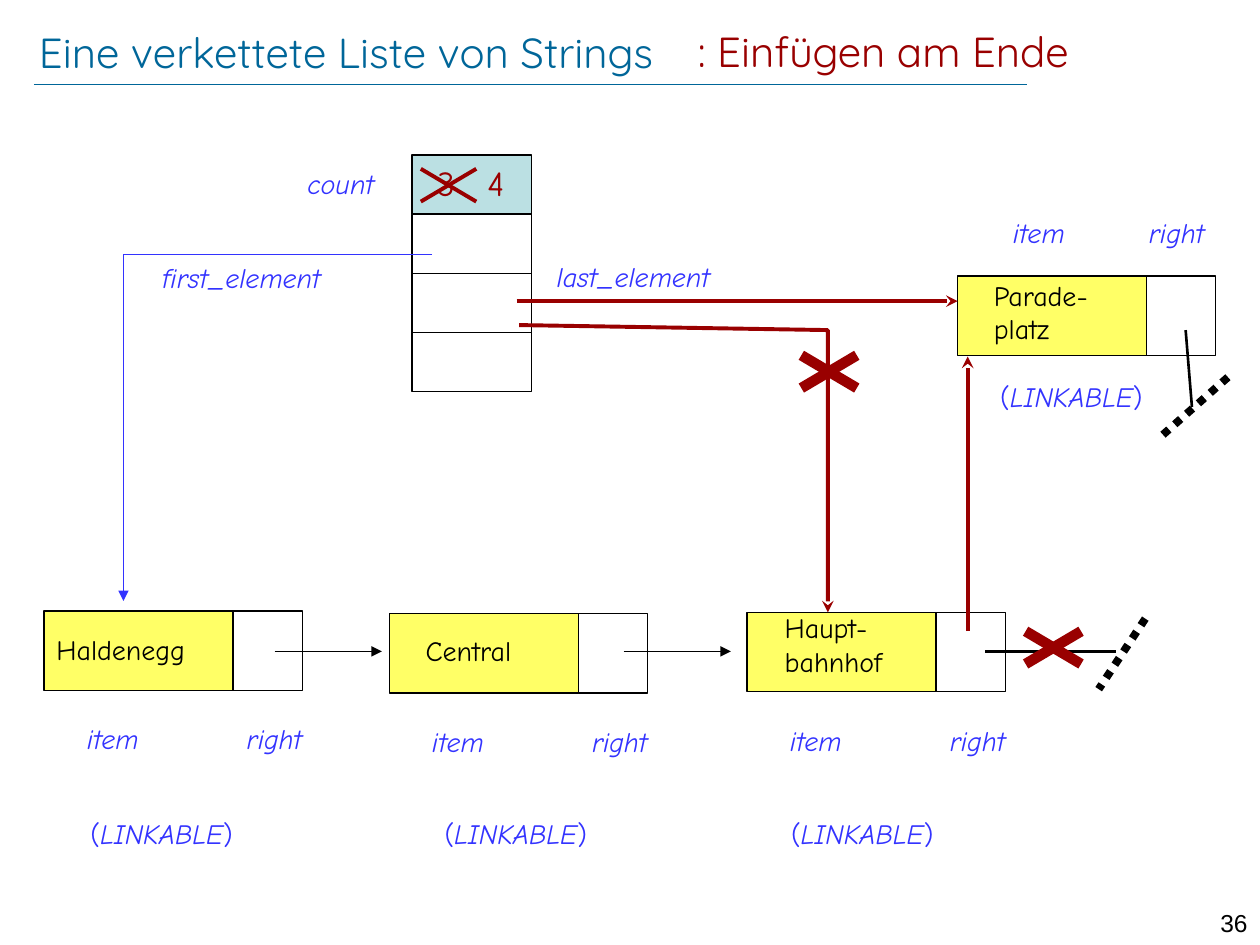
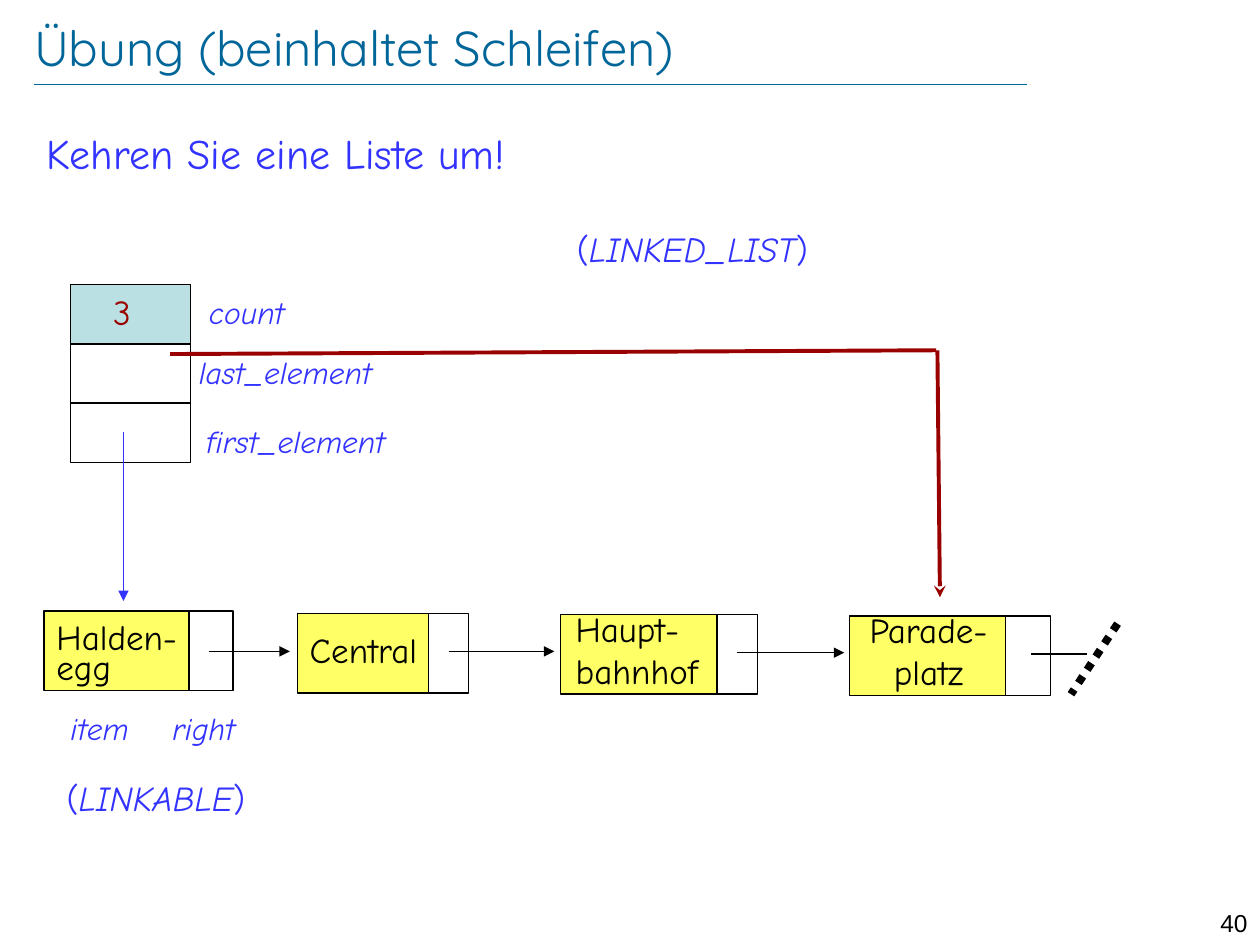
from dataclasses import dataclass
from typing import NamedTuple

from lxml import etree
from pptx import Presentation
from pptx.dml.color import RGBColor
from pptx.enum.dml import MSO_LINE
from pptx.enum.shapes import MSO_CONNECTOR, MSO_SHAPE
from pptx.enum.text import MSO_ANCHOR, PP_ALIGN
from pptx.oxml.ns import qn
from pptx.util import Inches, Pt

STRAIGHT = MSO_CONNECTOR.STRAIGHT
RECTANGLE = MSO_SHAPE.RECTANGLE
DOTTED = MSO_LINE.ROUND_DOT
LEFT, CENTER, RIGHT = PP_ALIGN.LEFT, PP_ALIGN.CENTER, PP_ALIGN.RIGHT
TOP, MIDDLE = MSO_ANCHOR.TOP, MSO_ANCHOR.MIDDLE

COLORS = {
    "title": "006699",
    "label": "3333FF",
    "accent": "990000",
    "ink": "000000",
    "item": "FFFF66",
    "count": "BBE0E3",
}
TITLE_FONT, TEXT_FONT, NUMBER_FONT = "Quicksand", "Comic Neue", "Arial"
NODE_HEIGHT = 0.63
CELL_WIDTH, CELL_HEIGHT = 0.95, 0.47


class Stroke(NamedTuple):
    color: str
    width: float
    head: str = ""
    dotted: bool = False


RULE = Stroke("title", 0.25)
OUTLINE = Stroke("ink", 0.75)
LINK = Stroke("ink", 0.75, "triangle")
VOID_LINK = Stroke("ink", 1.5)
VOID_BAR = Stroke("ink", 4.5, dotted=True)
FIRST = Stroke("label", 0.75)
FIRST_ARROW = Stroke("label", 0.75, "triangle")
LAST = Stroke("accent", 2.25)
LAST_ARROW = Stroke("accent", 2.25, "stealth")
BOLD_CROSS = Stroke("accent", 6)


class Line(NamedTuple):
    x1: float
    y1: float
    x2: float
    y2: float
    stroke: Stroke


class Cross(NamedTuple):
    x: float
    y: float
    stroke: Stroke


@dataclass
class Label:
    """Text at a place; parentheses around an italic class name stay upright."""
    text: str
    left: float
    top: float
    width: float = 2.8
    height: float = 0.4
    size: float = 16
    color: str = "label"
    font: str = TEXT_FONT
    italic: bool = True
    align: PP_ALIGN = LEFT
    anchor: MSO_ANCHOR = TOP
    inset: bool = True
    spacing: float = 1.0


@dataclass
class Node:
    text: str
    left: float
    top: float
    item_width: float
    link_width: float
    text_left: float
    text_top: float
    text_width: float
    size: float = 16
    align: PP_ALIGN = LEFT
    spacing: float = 1.0


def rgb(name: str) -> RGBColor:
    return RGBColor.from_string(COLORS[name])


def apply_stroke(shape, stroke: Stroke) -> None:
    shape.line.color.rgb = rgb(stroke.color)
    shape.line.width = Pt(stroke.width)
    if stroke.dotted:
        shape.line.dash_style = DOTTED
    if stroke.head:
        outline = shape.element.spPr.find(qn("a:ln"))
        etree.SubElement(outline, qn("a:tailEnd"), type=stroke.head)


def draw_line(slide, line: Line) -> None:
    ends = [Inches(value) for value in line[:4]]
    connector = slide.shapes.add_connector(STRAIGHT, *ends)
    apply_stroke(connector, line.stroke)
    etree.SubElement(connector.element.spPr, qn("a:effectLst"))


def draw_cross(slide, cross: Cross) -> None:
    x, y, stroke = cross
    for rise in (-0.13, 0.13):
        draw_line(slide, Line(x - 0.22, y - rise, x + 0.22, y + rise, stroke))


def draw_bent_arrow(slide, points: list[tuple[float, float]], stroke: Stroke) -> None:
    corners = [(Inches(x), Inches(y)) for x, y in points]
    builder = slide.shapes.build_freeform(*corners[0])
    builder.add_line_segments(corners[1:], close=False)
    arrow = builder.convert_to_shape()
    arrow.shadow.inherit = False
    arrow.fill.background()
    apply_stroke(arrow, stroke)


def draw_box(slide, left: float, top: float, width: float, height: float,
             fill: str = "") -> None:
    box = slide.shapes.add_shape(RECTANGLE, *map(Inches, (left, top, width, height)))
    box.shadow.inherit = False
    if fill:
        box.fill.solid()
        box.fill.fore_color.rgb = rgb(fill)
    else:
        box.fill.background()
    apply_stroke(box, OUTLINE)


def draw_label(slide, label: Label) -> None:
    place = map(Inches, (label.left, label.top, label.width, label.height))
    frame = slide.shapes.add_textbox(*place).text_frame
    settings = {"word_wrap": True, "vertical_anchor": label.anchor}
    if not label.inset:
        sides = ("left", "top", "right", "bottom")
        settings |= {f"margin_{side}": 0 for side in sides}
    for name, value in settings.items():
        setattr(frame, name, value)
    para = frame.paragraphs[0]
    para.alignment = label.align
    para.line_spacing = label.spacing
    wrapped = label.text.startswith("(")
    pieces = ["(", label.text[1:-1], ")"] if wrapped else label.text.split("\n")
    for index, piece in enumerate(pieces):
        if index and not wrapped:
            para.add_line_break()
        span = para.add_run()
        span.text = piece
        formats = {
            "name": label.font,
            "size": Pt(label.size),
            "italic": label.italic and piece not in "()",
        }
        for name, value in formats.items():
            setattr(span.font, name, value)
        span.font.color.rgb = rgb(label.color)


def draw_node(slide, node: Node) -> None:
    draw_box(slide, node.left, node.top, node.item_width, NODE_HEIGHT, "item")
    draw_box(slide, node.left + node.item_width, node.top, node.link_width, NODE_HEIGHT)
    draw_label(slide, Label(node.text, node.text_left, node.text_top, node.text_width,
                            size=node.size, color="ink", italic=False,
                            align=node.align, spacing=node.spacing))


def draw_list_header(slide, left: float, top: float, cells: int) -> None:
    """Draw the stacked cells of the list object, with the count on top."""
    for row in range(cells):
        draw_box(slide, left, top + row * CELL_HEIGHT, CELL_WIDTH, CELL_HEIGHT,
                 "" if row else "count")


def count_value(text: str, left: float, top: float) -> Label:
    return Label(text, left, top, 1.02, size=20, color="accent", italic=False)


def node_captions(item_left: float, right_left: float, top: float,
                  size: float = 16) -> list[Label]:
    return [Label("item", item_left, top, 0.79, size=size),
            Label("right", right_left, top, 0.79, size=size)]


def start_slide(deck, title: Label, number: str):
    slide = deck.slides.add_slide(deck.slide_layouts[6])
    draw_line(slide, Line(0.27, 0.67, 8.15, 0.67, RULE))
    draw_label(slide, Label(number, 9.45, 7.16, 0.55, 0.24, 14, "ink",
                            NUMBER_FONT, False, RIGHT))
    draw_label(slide, title)
    return slide


def title_label(text: str, left: float, top: float, width: float, height: float,
                size: float, color: str = "title", inset: bool = False) -> Label:
    return Label(text, left, top, width, height, size, color, TITLE_FONT,
                 False, anchor=MIDDLE, inset=inset)


def draw_parts(slide, nodes: list[Node], labels: list[Label], lines: list[Line],
               crosses: list[Cross]) -> None:
    parts = ((draw_node, nodes), (draw_label, labels),
             (draw_line, lines), (draw_cross, crosses))
    for draw, items in parts:
        for item in items:
            draw(slide, item)


def build_insert_slide(deck) -> None:
    title = title_label("Eine verkettete Liste von Strings", 0.31, 0.18, 6.87, 0.46, 24)
    slide = start_slide(deck, title, "36")
    draw_list_header(slide, 3.27, 1.23, 4)
    nodes = [
        Node("Haldenegg", 0.35, 4.85, 1.5, 0.55, 0.35, 4.97, 1.57),
        Node("Central", 3.09, 4.87, 1.5, 0.55, 3.28, 4.98, 1.57),
        Node("Haupt-\nbahnhof", 5.93, 4.86, 1.5, 0.55, 6.13, 4.8, 1.57),
        Node("Parade-\nplatz", 7.6, 2.19, 1.5, 0.55, 7.79, 2.16, 1.57),
    ]
    labels = [
        title_label(": Einfügen am Ende", 5.44, 0.01, 4.49, 0.79, 24, "accent", True),
        Label("count", 2.34, 1.27, 1.02),
        Label("first_element", 1.19, 2.02),
        Label("last_element", 4.32, 2.01),
        count_value("3", 3.37, 1.23),
        count_value("4", 3.77, 1.23),
        *node_captions(7.94, 9.02, 1.66),
        Label("(LINKABLE)", 7.84, 2.96, 1.54),
    ]
    for node, class_left in zip(nodes[:3], (0.62, 3.43, 6.18)):
        labels += node_captions(node.left + 0.24, node.left + 1.51, node.top + 0.83)
        labels.append(Label("(LINKABLE)", class_left, 6.43, 1.54))
    lines = [
        Line(2.18, 5.17, 3.03, 5.17, LINK),
        Line(4.95, 5.17, 5.8, 5.17, LINK),
        Line(7.82, 5.17, 8.86, 5.17, VOID_LINK),
        Line(9.09, 4.91, 8.72, 5.47, VOID_BAR),
        Line(9.41, 2.62, 9.46, 3.23, VOID_LINK),
        Line(9.23, 3.45, 9.75, 2.99, VOID_BAR),
        Line(3.43, 2.02, 0.98, 2.02, FIRST),
        Line(0.98, 2.02, 0.98, 4.77, FIRST_ARROW),
        Line(7.68, 5.01, 7.68, 2.83, LAST_ARROW),
        Line(4.1, 2.39, 7.6, 2.39, LAST_ARROW),
    ]
    crosses = [Cross(8.36, 5.14, BOLD_CROSS), Cross(6.58, 2.95, BOLD_CROSS),
               Cross(3.56, 1.47, LAST)]
    draw_parts(slide, nodes, labels, lines, crosses)
    draw_bent_arrow(slide, [(4.12, 2.58), (6.57, 2.62), (6.57, 4.86)], LAST_ARROW)


def build_exercise_slide(deck) -> None:
    title = title_label("Übung (beinhaltet Schleifen)", 0.27, 0.13, 8.69, 0.48, 28)
    slide = start_slide(deck, title, "40")
    draw_list_header(slide, 0.56, 2.26, 3)
    nodes = [
        Node("Halden-egg", 0.35, 4.85, 1.15, 0.35, 0.35, 4.93, 1.23, 20, spacing=0.7),
        Node("Central", 2.36, 4.87, 1.04, 0.32, 2.36, 4.94, 1.18, 20),
        Node("Haupt-\nbahnhof", 4.45, 4.88, 1.24, 0.32, 4.47, 4.77, 1.33, 20),
        Node("Parade-\nplatz", 6.74, 4.89, 1.24, 0.36, 6.76, 4.78, 1.22, 20, CENTER),
    ]
    labels = [
        Label("Kehren Sie eine Liste um!", 0.27, 0.96, 9.4, 0.5, 24, italic=False),
        Label("(LINKED_LIST)", 4.48, 1.76, size=20),
        Label("count", 1.56, 2.28, 1.02, size=18),
        Label("last_element", 1.48, 2.75, size=18),
        Label("first_element", 1.54, 3.3, size=18),
        count_value("3", 0.8, 2.26),
        *node_captions(0.46, 1.27, 5.58, 18),
        Label("(LINKABLE)", 0.43, 6.11, 2.06, size=20),
    ]
    lines = [
        Line(1.66, 5.17, 2.3, 5.17, LINK),
        Line(3.56, 5.17, 4.4, 5.17, LINK),
        Line(5.85, 5.18, 6.7, 5.18, LINK),
        Line(8.18, 5.19, 8.63, 5.19, VOID_LINK),
        Line(8.87, 4.95, 8.5, 5.51, VOID_BAR),
        Line(0.98, 3.43, 0.98, 4.77, FIRST_ARROW),
        Line(1.35, 2.81, 7.43, 2.78, LAST),
        Line(7.44, 2.78, 7.46, 4.74, LAST_ARROW),
    ]
    draw_parts(slide, nodes, labels, lines, [])


def main() -> None:
    deck = Presentation()
    deck.slide_width, deck.slide_height = Inches(10), Inches(7.5)
    build_insert_slide(deck)
    build_exercise_slide(deck)
    deck.save("out.pptx")


if __name__ == "__main__":
    main()
